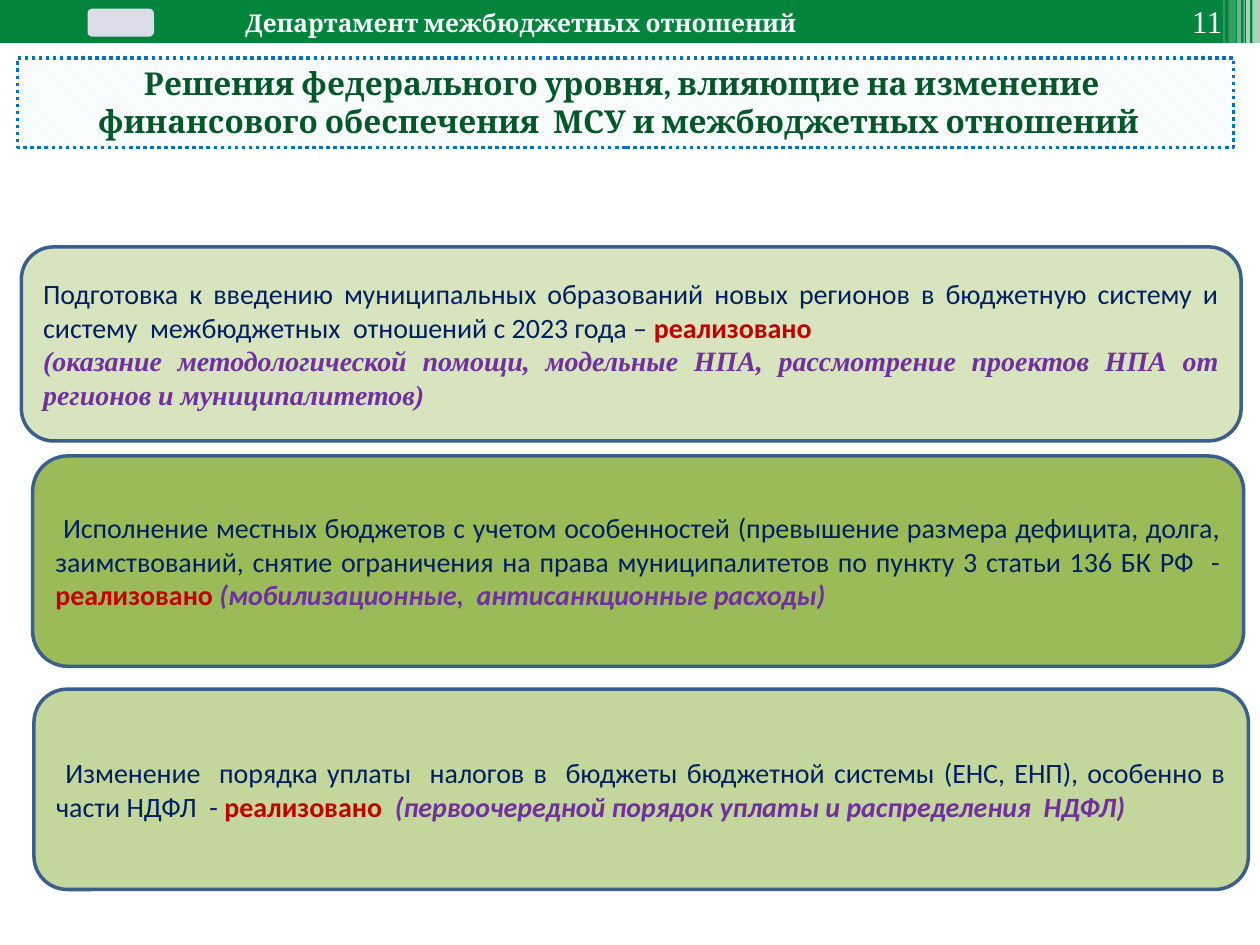
from pptx import Presentation
from pptx.dml.color import RGBColor
from pptx.enum.dml import MSO_LINE, MSO_PATTERN
from pptx.enum.shapes import MSO_SHAPE
from pptx.enum.text import MSO_ANCHOR, PP_ALIGN
from pptx.oxml.ns import qn
from pptx.util import Pt
from lxml import etree

RECT, ROUND = MSO_SHAPE.RECTANGLE, MSO_SHAPE.ROUNDED_RECTANGLE
TOP, MIDDLE = MSO_ANCHOR.TOP, MSO_ANCHOR.MIDDLE
LEFT, CENTER, JUSTIFY = PP_ALIGN.LEFT, PP_ALIGN.CENTER, PP_ALIGN.JUSTIFY
HATCH, DOTS = MSO_PATTERN.DARK_DOWNWARD_DIAGONAL, MSO_LINE.ROUND_DOT

WHITE, GREEN, NAVY, RED, PURPLE = "FFFFFF", "02843D", "002060", "C00000", "7030A0"
SERIF, SANS, HEAD = "Times New Roman", "Calibri", "Cambria"
WIDE, BAND = 720, 24.5

BODY = (SANS, 16, NAVY, False, False)
DONE = (SANS, 16, RED, True, False)
NOTE = (SANS, 16, PURPLE, True, True)
ASIDE = (SERIF, 16, PURPLE, True, True)
TITLE = (HEAD, 18, "005828", True, False)
DEPT = (HEAD, 14, WHITE, True, False)
PAGE = (SERIF, 18, WHITE, False, False)

STRIPES = [(715.7, 4.3, 65), (712.1, 2.2, 65), (710.6, 0.7, 60),
           (707, 2.2, 40), (702, 4.3, 20), (699.1, 0.7, 30)]

HEADING = [
    [("Решения федерального уровня, влияющие на изменение ", TITLE)],
    [("финансового обеспечения  МСУ и межбюджетных отношений  ", TITLE)],
]

CARDS = [
    ((12.2, 141.1, 697, 110.9), "D7E4BD", [
        [("Подготовка к введению муниципальных образований новых регионов в "
          "бюджетную систему и систему  межбюджетных  отношений с 2023 года – ", BODY),
         ("реализовано", DONE)],
        [("(оказание методологической помощи, модельные НПА, рассмотрение "
          "проектов НПА от регионов и муниципалитетов)", ASIDE)],
    ]),
    ((18.7, 260.6, 692, 120.2), "9BBB59", [
        [(" Исполнение местных бюджетов с учетом особенностей (превышение размера "
          "дефицита, долга, заимствований, снятие ограничения на права "
          "муниципалитетов по пункту 3 статьи 136 БК РФ  - ", BODY),
         ("реализовано ", DONE),
         ("(мобилизационные,  антисанкционные расходы)", NOTE)],
    ]),
    ((19.4, 393.8, 694, 114.5), "C3D69B", [
        [(" Изменение  порядка уплаты  налогов в  бюджеты бюджетной системы "
          "(ЕНС, ЕНП), особенно в части НДФЛ  - ", BODY),
         ("реализовано  ", DONE),
         ("(первоочередной порядок уплаты и распределения  НДФЛ)", NOTE)],
    ]),
]


def color(code):
    return RGBColor.from_string(code)


def block(slide, area, fill, kind=RECT, edge=None):
    shape = slide.shapes.add_shape(kind, *map(Pt, area))
    shape.shadow.inherit = False
    shape.fill.solid()
    shape.fill.fore_color.rgb = color(fill)
    if edge:
        shape.line.color.rgb = color(edge)
        shape.line.width = Pt(2)
    else:
        shape.line.fill.background()
    return shape


def fade(shape, share):
    tint = next(shape.fill._xPr.iter(qn("a:srgbClr")))
    etree.SubElement(tint, qn("a:alpha")).set("val", str(share * 1000))


def write(shape, paras, align, anchor=TOP):
    frame = shape.text_frame
    frame.word_wrap = True
    frame.vertical_anchor = anchor
    for i, parts in enumerate(paras):
        para = frame.paragraphs[0] if i == 0 else frame.add_paragraph()
        para.alignment = align
        for text, (face, size, tone, bold, slant) in parts:
            run = para.add_run()
            run.text = text
            font = run.font
            font.name, font.size = face, Pt(size)
            font.bold, font.italic = bold, slant
            font.color.rgb = color(tone)


def label(slide, area, text, style, align, anchor=TOP):
    box = slide.shapes.add_textbox(*map(Pt, area))
    write(box, [[(text, style)]], align, anchor)
    return box


def header(slide):
    block(slide, (0, 0, WIDE, BAND), GREEN)
    for left, width, share in STRIPES:
        fade(block(slide, (left, 0, width, BAND), WHITE), share)
    block(slide, (50, 5, 38, 16), "DBDBE9", ROUND)
    page = label(slide, (672.5, 1.4, 34.6, 21.6), "11", PAGE, CENTER)
    frame = page.text_frame
    frame.margin_left = frame.margin_right = 0
    frame.margin_top = frame.margin_bottom = 0
    label(slide, (133.2, 0.7, 453.6, 24.5),
          "Департамент межбюджетных отношений", DEPT, LEFT, MIDDLE)


def main():
    deck = Presentation()
    deck.slide_width, deck.slide_height = Pt(WIDE), Pt(540)
    slide = deck.slides.add_slide(deck.slide_layouts[6])
    header(slide)

    title = block(slide, (10.1, 33.1, 694.8, 51.1), WHITE, edge="0070C0")
    title.fill.patterned()
    title.fill.pattern = HATCH
    title.fill.fore_color.rgb = color("DBEEF4")
    title.fill.back_color.rgb = color(WHITE)
    title.line.dash_style = DOTS
    write(title, HEADING, CENTER)

    for area, fill, paras in CARDS:
        card = block(slide, area, fill, ROUND, "3A5F8C")
        write(card, paras, JUSTIFY, MIDDLE)

    deck.save("out.pptx")


if __name__ == "__main__":
    main()
